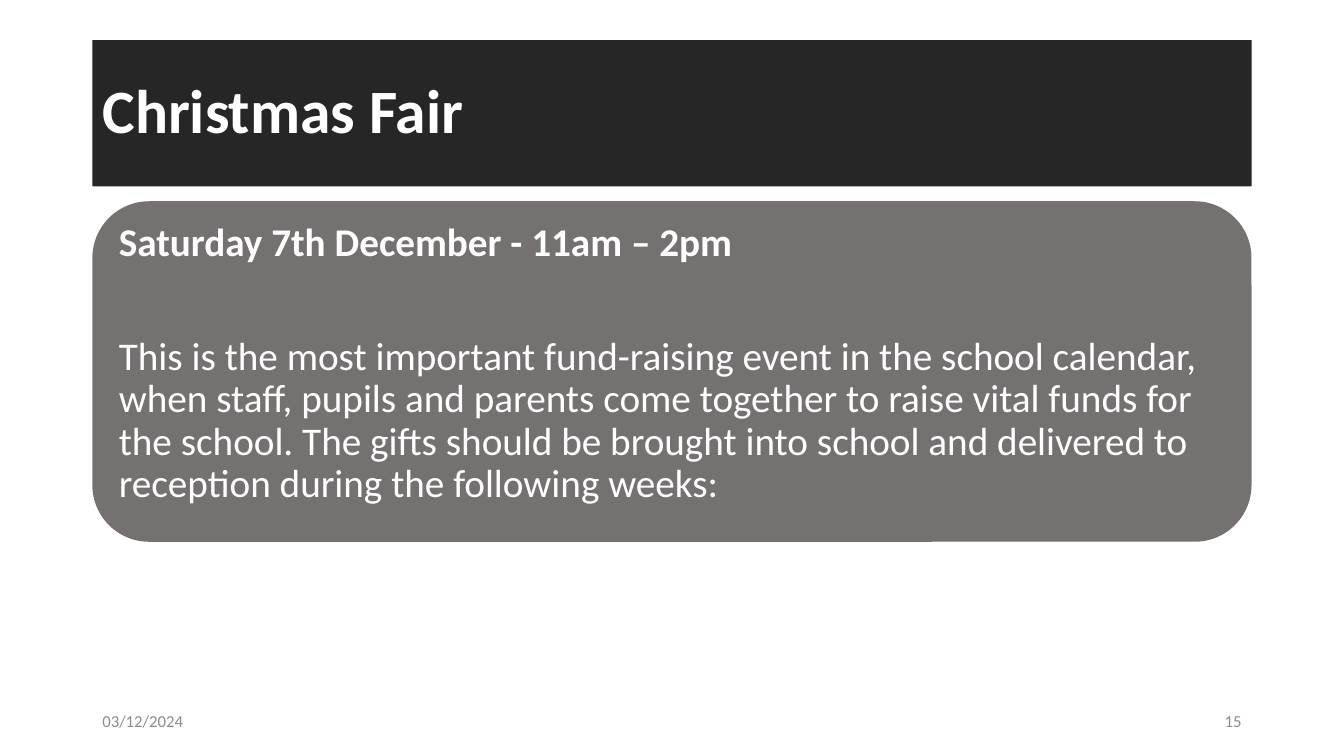
from pptx import Presentation
from pptx.dml.color import RGBColor
from pptx.enum import shapes, text
from pptx.util import Pt

WHITE = RGBColor(0xFF, 0xFF, 0xFF)
BLACK = RGBColor(0x26, 0x26, 0x26)
STONE = RGBColor(0x76, 0x71, 0x71)
GREY = RGBColor(0x8C, 0x8C, 0x8C)
LEFT, WIDE = 66, 828
NOTES = [
    ("Saturday 7th December - 11am – 2pm", True, 0),
    ("This is the most important fund-raising event in the school calendar, "
     "when staff, pupils and parents come together to raise vital funds for "
     "the school. The gifts should be brought into school and delivered to "
     "reception during the following weeks:", False, 51),
]


def write(para, words, size, color, bold=False, align=text.PP_ALIGN.LEFT):
    para.alignment = align
    run = para.add_run()
    run.text = words
    font = run.font
    font.name, font.size, font.bold = "Calibri", Pt(size), bold
    font.color.rgb = color


def paint(shape, color):
    shape.fill.solid()
    shape.fill.fore_color.rgb = color
    shape.line.fill.background()


def banner(slide, x, y, w, h):
    title = slide.shapes.title
    title.left, title.top, title.width, title.height = map(Pt, (x, y, w, h))
    paint(title, BLACK)
    frame = title.text_frame
    frame.auto_size = text.MSO_AUTO_SIZE.NONE
    frame.vertical_anchor = text.MSO_ANCHOR.MIDDLE
    para = frame.paragraphs[0]
    para.line_spacing = 0.9
    write(para, "Christmas Fair", 44, WHITE, True)


def panel(slide, x, y, w, h):
    card = slide.shapes.add_shape(
        shapes.MSO_SHAPE.ROUNDED_RECTANGLE, *map(Pt, (x, y, w, h)))
    card.shadow.inherit = False
    paint(card, STONE)
    frame = card.text_frame
    frame.word_wrap = True
    frame.vertical_anchor = text.MSO_ANCHOR.TOP
    for row, (words, bold, gap) in enumerate(NOTES):
        para = frame.add_paragraph() if row else frame.paragraphs[0]
        para.line_spacing = 0.9
        para.space_before = Pt(gap)
        write(para, words, 28, WHITE, bold)


def footer(slide, x, y, w, h):
    span = 216
    parts = [(x, "03/12/2024", text.PP_ALIGN.LEFT),
             (x + w - span, "15", text.PP_ALIGN.RIGHT)]
    for left, words, align in parts:
        box = slide.shapes.add_textbox(*map(Pt, (left, y, span, h)))
        frame = box.text_frame
        frame.word_wrap = True
        frame.vertical_anchor = text.MSO_ANCHOR.MIDDLE
        write(frame.paragraphs[0], words, 12, GREY, align=align)


def main():
    deck = Presentation()
    deck.slide_width, deck.slide_height = Pt(960), Pt(540)
    slide = deck.slides.add_slide(deck.slide_layouts[5])
    banner(slide, LEFT, 28.75, WIDE, 104.4)
    panel(slide, LEFT, 143.75, WIDE, 243.25)
    footer(slide, LEFT, 500.5, WIDE, 28.75)
    deck.save("out.pptx")


if __name__ == "__main__":
    main()
